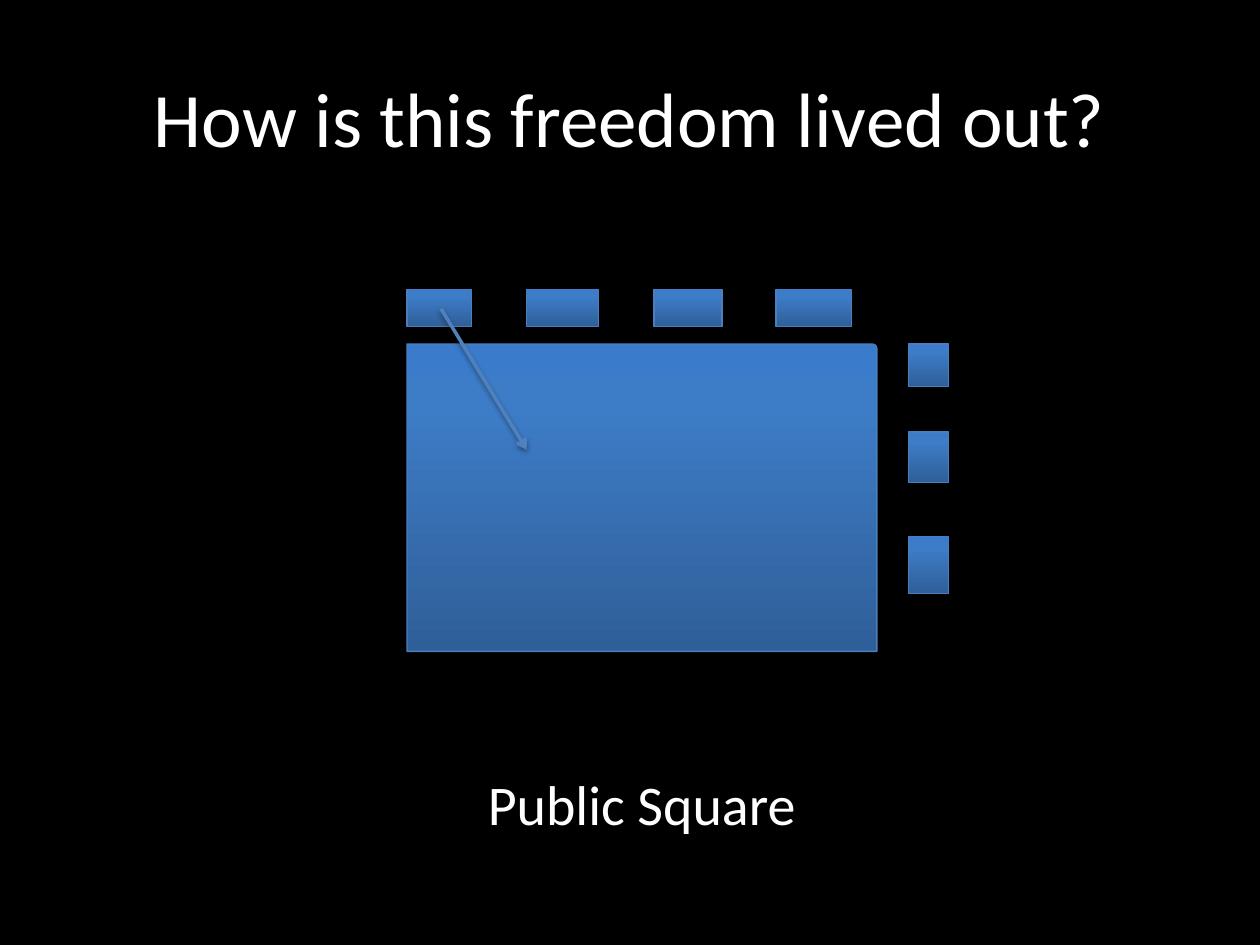
from copy import deepcopy

from lxml import etree
from pptx import Presentation
from pptx.dml.color import RGBColor
from pptx.enum.shapes import MSO_CONNECTOR, MSO_SHAPE
from pptx.enum.text import MSO_ANCHOR, MSO_AUTO_SIZE, PP_ALIGN
from pptx.oxml import parse_xml
from pptx.oxml.ns import nsdecls, qn
from pptx.util import Inches, Pt

RECTANGLE = MSO_SHAPE.RECTANGLE
ROUNDED_CORNER = MSO_SHAPE.ROUND_1_RECTANGLE
STRAIGHT = MSO_CONNECTOR.STRAIGHT
MIDDLE = MSO_ANCHOR.MIDDLE
CENTER = PP_ALIGN.CENTER
GROW = MSO_AUTO_SIZE.SHAPE_TO_FIT_TEXT

FONT = "Calibri"
GRADIENT = [(0, "2F5F99"), (0.8, "3D7CC7"), (1, "3A7CCB")]
SQUARE_LEFT, SQUARE_TOP, SQUARE_WIDTH, SQUARE_HEIGHT = 3.23, 2.73, 3.73, 2.44
TOP_ROW_Y, TOP_ROW_HEIGHT = 2.3, 0.29
TOP_ROW = [(3.23, 0.51), (4.18, 0.57), (5.19, 0.54), (6.16, 0.6)]
SIDE_X, SIDE_WIDTH = 7.21, 0.32
SIDE_COLUMN = [(2.73, 0.34), (3.43, 0.4), (4.26, 0.45)]


def rgb(value):
    """Turn a hex string into a colour."""
    return RGBColor.from_string(value)


def add_shadow(element, opacity, distance):
    """Give a shape or connector a soft shadow that falls straight down."""
    element._element.spPr.append(parse_xml(
        f'<a:effectLst {nsdecls("a")}>'
        f'<a:outerShdw blurRad="{Pt(3.1)}" dist="{Pt(distance)}" '
        'dir="5400000" rotWithShape="0"><a:srgbClr val="000000">'
        f'<a:alpha val="{opacity * 1000}"/></a:srgbClr>'
        '</a:outerShdw></a:effectLst>'))


def fill_gradient(block):
    """Fill a block with the three-stop blue gradient, dark at the bottom."""
    block.fill.gradient()
    block.fill.gradient_angle = 90
    stop_list = block._element.spPr.find(f'.//{qn("a:gsLst")}')
    stop_list.append(deepcopy(stop_list[-1]))
    for stop, (position, color) in zip(block.fill.gradient_stops, GRADIENT):
        stop.position = position
        stop.color.rgb = rgb(color)


def add_block(slide, left, top, width, height, kind=RECTANGLE):
    """Add one blue block and return it."""
    block = slide.shapes.add_shape(
        kind, Inches(left), Inches(top), Inches(width), Inches(height))
    fill_gradient(block)
    block.line.color.rgb = rgb("4B7EBC")
    block.line.width = Pt(0.75)
    add_shadow(block, 35, 1.8)
    return block


def add_arrow(slide, start, end):
    """Add the arrow that leads from a block into the square."""
    arrow = slide.shapes.add_connector(
        STRAIGHT, *map(Inches, start), *map(Inches, end))
    arrow.line.color.rgb = rgb("4F81BD")
    arrow.line.width = Pt(2)
    etree.SubElement(arrow.line._get_or_add_ln(), qn("a:tailEnd"), type="arrow")
    add_shadow(arrow, 38, 1.6)


def write_text(frame, text, size):
    """Write one centred white line into a text frame."""
    frame.text = text
    frame.word_wrap = True
    line = frame.paragraphs[0]
    line.alignment = CENTER
    font = line.runs[0].font
    font.name, font.size = FONT, Pt(size)
    font.color.rgb = rgb("FFFFFF")


def add_title(slide, text):
    """Place and fill the title placeholder."""
    title = slide.shapes.title
    title.left, title.top = Inches(0.5), Inches(0.3)
    title.width, title.height = Inches(9), Inches(1.25)
    write_text(title.text_frame, text, 44)
    title.text_frame.vertical_anchor = MIDDLE


def add_caption(slide, text):
    """Add the caption below the square, as wide as the square."""
    caption = slide.shapes.add_textbox(
        Inches(SQUARE_LEFT), Inches(6.06), Inches(SQUARE_WIDTH), Inches(0.64))
    write_text(caption.text_frame, text, 32)
    caption.text_frame.auto_size = GROW


def main():
    """Build and save the slide."""
    deck = Presentation()
    deck.slide_width, deck.slide_height = Inches(10), Inches(7.5)
    slide = deck.slides.add_slide(deck.slide_layouts[5])
    slide.background.fill.solid()
    slide.background.fill.fore_color.rgb = rgb("000000")

    add_title(slide, "How is this freedom lived out?")
    square = add_block(slide, SQUARE_LEFT, SQUARE_TOP,
                       SQUARE_WIDTH, SQUARE_HEIGHT, ROUNDED_CORNER)
    square.adjustments[0] = 0.015
    add_caption(slide, "Public Square")
    for top, height in SIDE_COLUMN:
        add_block(slide, SIDE_X, top, SIDE_WIDTH, height)
    for left, width in TOP_ROW:
        add_block(slide, left, TOP_ROW_Y, width, TOP_ROW_HEIGHT)
    add_arrow(slide, (3.5, 2.45), (4.18, 3.57))
    deck.save("out.pptx")


if __name__ == "__main__":
    main()
